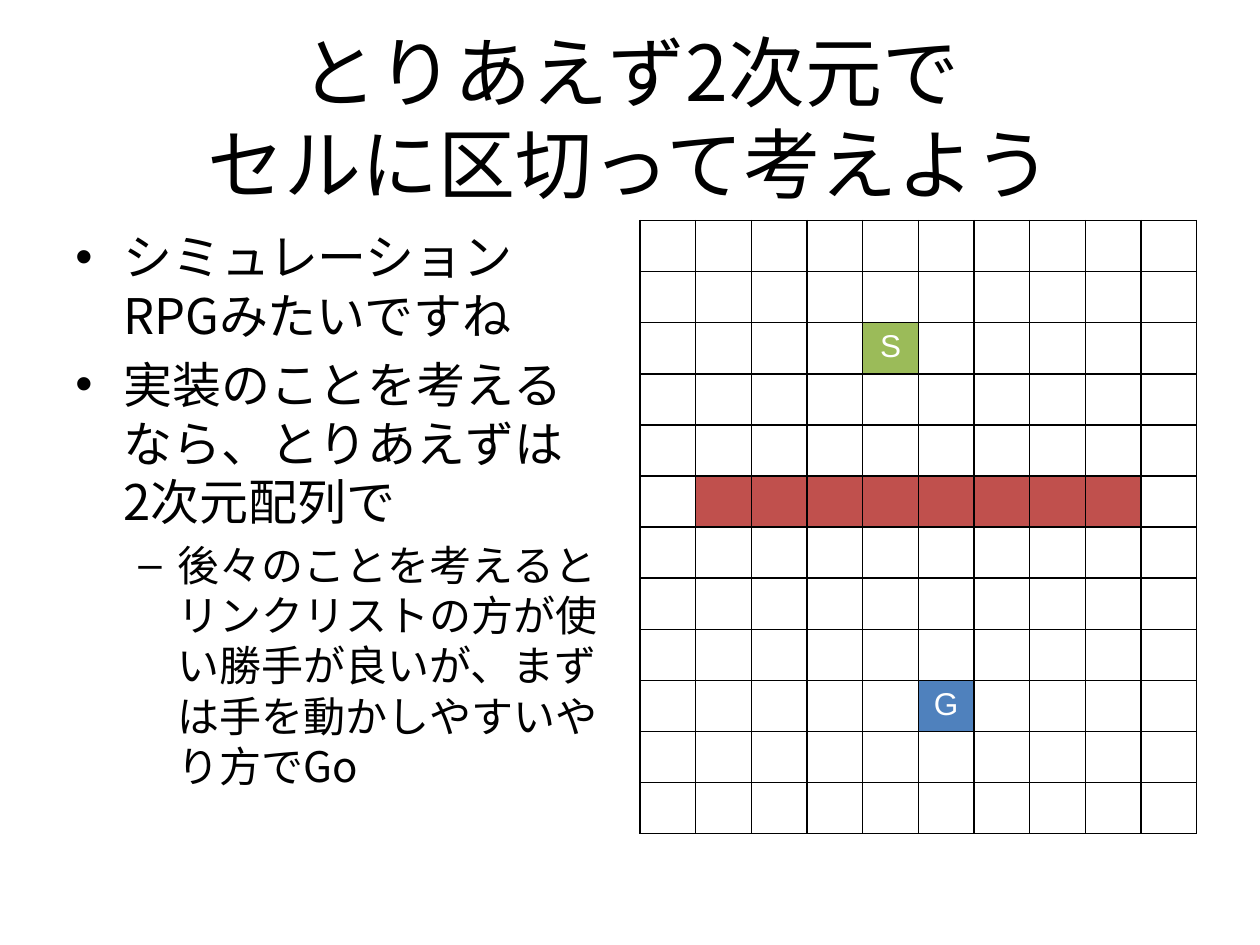
import pptx
import pptx.dml.color
import pptx.enum.text
import pptx.oxml.ns
import pptx.util
from lxml import etree

Inches = pptx.util.Inches
Pt = pptx.util.Pt
ALIGN = pptx.enum.text.PP_ALIGN
ANCHOR = pptx.enum.text.MSO_ANCHOR

COLUMNS, ROWS = 10, 12
START, GOAL, WALL = "9BBB59", "4F81BD", "C0504D"
# (row, column): (fill, label)
MARKED_CELLS = {(2, 4): (START, "S"), (9, 5): (GOAL, "G")}
MARKED_CELLS.update({(5, column): (WALL, "") for column in range(1, 9)})

# level, size, left margin, hanging indent, bullet, text
POINTS = [
    (0, 28, 0.38, 0.38, "•", "シミュレーションRPGみたいですね"),
    (0, 28, 0.38, 0.38, "•", "実装のことを考えるなら、とりあえずは\n2次元配列で"),
    (1, 24, 0.81, 0.31, "–",
     "後々のことを考えるとリンクリストの方が使い勝手が良いが、まずは手を動かしやすいやり方でGo"),
]


def rgb(code):
    return pptx.dml.color.RGBColor.from_string(code)


def set_values(target, values):
    for name, value in values.items():
        setattr(target, name, value)


def add_xml(parent, tag, **attributes):
    return etree.SubElement(parent, pptx.oxml.ns.qn(tag), attributes)


class SlideBuilder:
    """Holds the style and the slide being filled."""

    text_font = "Noto Sans CJK JP"
    label_font = "Arial"
    text_color = "000000"
    label_color = "FFFFFF"
    border_color = "000000"

    def __init__(self, slide):
        self.slide = slide

    def fill_paragraph(self, paragraph, text, size, font, color):
        paragraph.text = text
        for run in paragraph.runs:
            set_values(run.font, {"size": Pt(size), "name": font})
            run.font.color.rgb = rgb(color)
            add_xml(run.font._element, "a:ea", typeface=font)

    def text_frame(self, left, top, width, height, anchor):
        box = self.slide.shapes.add_textbox(
            Inches(left), Inches(top), Inches(width), Inches(height))
        set_values(box.text_frame, {"word_wrap": True, "vertical_anchor": anchor})
        return box.text_frame

    def title(self, text, left, top, width, height):
        heading = self.text_frame(left, top, width, height, ANCHOR.MIDDLE).paragraphs[0]
        heading.alignment = ALIGN.CENTER
        self.fill_paragraph(heading, text, 44, self.text_font, self.text_color)

    def bullets(self, points, left, top, width, height):
        frame = self.text_frame(left, top, width, height, ANCHOR.TOP)
        for index, (level, size, margin, hanging, bullet, text) in enumerate(points):
            point = frame.add_paragraph() if index else frame.paragraphs[0]
            self.fill_paragraph(point, text, size, self.text_font, self.text_color)
            set_values(point, {"level": level, "space_before": Pt(size * 0.2)})
            properties = point._p.get_or_add_pPr()
            properties.set("marL", str(Inches(margin)))
            properties.set("indent", str(-Inches(hanging)))
            add_xml(properties, "a:buFont", typeface="Arial")
            add_xml(properties, "a:buChar", char=bullet)

    def border(self, cell):
        properties = cell._tc.get_or_add_tcPr()
        for side in ("a:lnL", "a:lnR", "a:lnT", "a:lnB"):
            line = add_xml(properties, side, w=str(Pt(1)))
            fill = add_xml(line, "a:solidFill")
            add_xml(fill, "a:srgbClr", val=self.border_color)

    def cell_map(self, marked, left, top, width, height):
        """Draw the grid of cells, with fills and labels on the marked ones."""
        table = self.slide.shapes.add_table(
            ROWS, COLUMNS, Inches(left), Inches(top), Inches(width), Inches(height)).table
        set_values(table, {"first_row": False, "horz_banding": False})
        for row in range(ROWS):
            for column in range(COLUMNS):
                cell = table.cell(row, column)
                self.border(cell)
                if (row, column) not in marked:
                    cell.fill.background()
                    continue
                color, label = marked[row, column]
                cell.fill.solid()
                cell.fill.fore_color.rgb = rgb(color)
                if label:
                    paragraph = cell.text_frame.paragraphs[0]
                    paragraph.alignment = ALIGN.CENTER
                    self.fill_paragraph(paragraph, label, 18, self.label_font, self.label_color)


def main():
    deck = pptx.Presentation()
    set_values(deck, {"slide_width": Inches(10), "slide_height": Inches(7.5)})
    builder = SlideBuilder(deck.slides.add_slide(deck.slide_layouts[6]))
    builder.title("とりあえず2次元で\nセルに区切って考えよう", 0.5, 0.3, 9, 1.25)
    builder.bullets(POINTS, 0.5, 1.75, 4.42, 4.95)
    builder.cell_map(MARKED_CELLS, 5.08, 1.75, 4.42, 4.87)
    deck.save("out.pptx")


if __name__ == "__main__":
    main()
